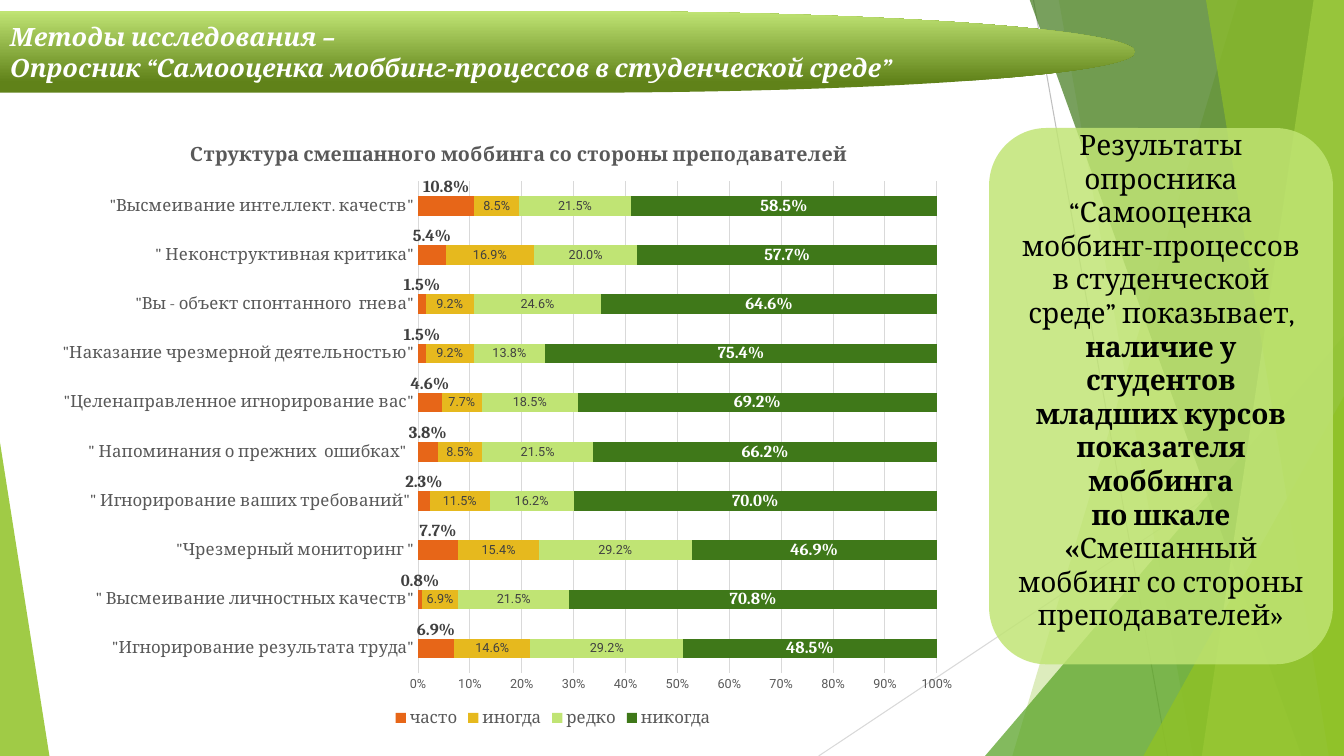
from copy import deepcopy
from dataclasses import dataclass
from typing import Optional

from pptx import Presentation
from pptx.chart.data import CategoryChartData
from pptx.dml.color import RGBColor
from pptx.enum import chart as charts, shapes, text
from pptx.oxml import parse_xml
from pptx.oxml.ns import nsdecls
from pptx.util import Inches, Pt

WIDTH, HEIGHT = 13.33, 7.5


@dataclass(frozen=True)
class Theme:
    serif: str = "Cambria"
    sans: str = "Roboto"
    white: str = "FFFFFF"
    black: str = "000000"
    axis_text: str = "595959"
    label_text: str = "404040"
    grid: str = "D9D9D9"
    line: str = "BFBFBF"
    lime: str = "90C226"
    leaf: str = "54A021"
    forest: str = "3F7819"
    pale: str = "C0E474"
    olive: str = "608219"
    orange: str = "E76618"
    yellow: str = "E6B91E"
    heading: int = 18
    body: int = 20
    title: int = 14
    label: int = 12
    small: int = 9


THEME = Theme()


@dataclass(frozen=True)
class Ray:
    start: tuple[float, float]
    end: tuple[float, float]
    color: str


@dataclass(frozen=True)
class Band:
    top_x: float
    bottom_left: float
    color: str
    opacity: int
    bottom_right: float = WIDTH
    top_right: float = WIDTH


@dataclass(frozen=True)
class Wedge:
    left: float
    top: float
    width: float
    peak: float
    color: str
    opacity: int


@dataclass(frozen=True)
class Answer:
    name: str
    values: tuple[float, ...]
    color: str
    text_color: str = THEME.label_text
    strong: bool = False


RAYS = (Ray((10.25, 0), (11.58, HEIGHT), THEME.line),
        Ray((WIDTH, 4.03), (8.12, HEIGHT), THEME.grid))
BACKDROP = (
    Band(12.28, 10.04, THEME.lime, 30),
    Band(10.5, 11.83, THEME.lime, 20),
    Wedge(9.77, 3.33, 3.56, 1, THEME.leaf, 72),
    Band(10.21, 12.91, THEME.forest, 70),
    Band(13.03, 11.92, THEME.pale, 70),
    Band(11.96, 13.18, THEME.lime, 65),
    Wedge(11.34, 3.93, 1.99, 1, THEME.lime, 80),
    Wedge(0, 4.39, 0.49, 0, THEME.lime, 85),
)
SCALES = (
    ' "Игнорирование результата труда"', '" Высмеивание личностных качеств"',
    ' "Чрезмерный мониторинг "', '" Игнорирование ваших требований" ',
    '" Напоминания о прежних  ошибках"  ', '"Целенаправленное игнорирование вас"',
    '"Наказание чрезмерной деятельностью"', '"Вы - объект спонтанного  гнева"',
    '" Неконструктивная критика"', '"Высмеивание интеллект. качеств"',
)
ANSWERS = (
    Answer("часто", (0.069, 0.008, 0.077, 0.023, 0.038, 0.046, 0.015, 0.015, 0.054, 0.108),
           THEME.orange, strong=True),
    Answer("иногда", (0.146, 0.069, 0.154, 0.115, 0.085, 0.077, 0.092, 0.092, 0.169, 0.085),
           THEME.yellow),
    Answer("редко", (0.292, 0.215, 0.292, 0.162, 0.215, 0.185, 0.138, 0.246, 0.2, 0.215),
           THEME.pale),
    Answer("никогда", (0.485, 0.708, 0.469, 0.7, 0.662, 0.692, 0.754, 0.646, 0.577, 0.585),
           THEME.forest, THEME.white, True),
)
LABEL_RISE = 0.03


def rgb(color: str) -> RGBColor:
    return RGBColor.from_string(color)


def style_font(font, *, size: float, color: str, name: str = THEME.serif,
               bold: bool = False, italic: bool = False) -> None:
    font.size, font.name, font.bold, font.italic = Pt(size), name, bold, italic
    font.color.rgb = rgb(color)


def write(para, words: str, **style) -> None:
    for number, line in enumerate(words.split("\n")):
        if number:
            para.add_line_break()
        span = para.add_run()
        span.text = line
        style_font(span.font, **style)


def paint(shape, color: str, opacity: int) -> None:
    shape.shadow.inherit = False
    shape.line.fill.background()
    shape.fill.solid()
    shape.fill.fore_color.rgb = rgb(color)
    tint = shape.element.xpath("./p:spPr/a:solidFill/a:srgbClr")[0]
    tint.append(parse_xml(f'<a:alpha {nsdecls("a")} val="{opacity * 1000}"/>'))


def add_box(page, kind, left: float, top: float, width: float, height: float):
    return page.shapes.add_shape(kind, *map(Inches, (left, top, width, height)))


def draw_ray(page, ray: Ray) -> None:
    line = page.shapes.add_connector(shapes.MSO_CONNECTOR.STRAIGHT,
                                     *map(Inches, ray.start + ray.end))
    line.line.color.rgb = rgb(ray.color)
    line.line.width = Pt(0.75)
    line.element.spPr.append(parse_xml(f'<a:effectLst {nsdecls("a")}/>'))


def draw_band(page, band: Band) -> None:
    outline = page.shapes.build_freeform(Inches(band.top_x), Inches(-0.01))
    corners = ((band.top_right, -0.01), (band.bottom_right, HEIGHT), (band.bottom_left, HEIGHT))
    outline.add_line_segments([(Inches(x), Inches(y)) for x, y in corners], close=True)
    paint(outline.convert_to_shape(), band.color, band.opacity)


def draw_wedge(page, wedge: Wedge) -> None:
    box = add_box(page, shapes.MSO_SHAPE.ISOSCELES_TRIANGLE, wedge.left, wedge.top,
                  wedge.width, HEIGHT - wedge.top)
    box.adjustments[0] = wedge.peak
    paint(box, wedge.color, wedge.opacity)


def draw_heading(page) -> None:
    box = add_box(page, shapes.MSO_SHAPE.FLOWCHART_DELAY, 0, 0.11, 11.26, 0.81)
    box.shadow.inherit = False
    box.line.fill.background()
    box.fill.gradient()
    box.fill.gradient_angle = 90
    for stop, color, position in zip(box.fill.gradient_stops, (THEME.olive, THEME.pale), (0.13, 1)):
        stop.color.rgb, stop.position = rgb(color), position
    para = box.text_frame.paragraphs[0]
    para.alignment = text.PP_ALIGN.LEFT
    write(para, "Методы исследования – \nОпросник “Самооценка моббинг-процессов в студенческой среде”",
          size=THEME.heading, color=THEME.white, bold=True, italic=True)


def draw_summary(page) -> None:
    box = add_box(page, shapes.MSO_SHAPE.ROUNDED_RECTANGLE, 9.81, 1.27, 3.41, 5.32)
    paint(box, THEME.pale, 84)
    frame = box.text_frame
    frame.word_wrap = True
    frame.margin_bottom = Inches(0.38)
    paragraphs = (
        (("Результаты опросника “Самооценка моббинг-процессов в студенческой среде” показывает, ", False),
         ("наличие у студентов младших курсов показателя моббинга", True)),
        (("по шкале «", True), ("Смешанный моббинг со стороны преподавателей»", False)),
    )
    for para, spans in zip((frame.paragraphs[0], frame.add_paragraph()), paragraphs):
        para.alignment = text.PP_ALIGN.CENTER
        for words, bold in spans:
            write(para, words, size=THEME.body, color=THEME.black, bold=bold)


def layout_xml(x: float, y: float, size: Optional[tuple[float, float]] = None, edge: bool = True):
    modes = '<c:xMode val="edge"/><c:yMode val="edge"/>' if edge else ""
    target = '<c:layoutTarget val="inner"/>' if size else ""
    extent = f'<c:w val="{size[0]}"/><c:h val="{size[1]}"/>' if size else ""
    return parse_xml(f'<c:layout {nsdecls("c")}><c:manualLayout>{target}{modes}'
                     f'<c:x val="{x}"/><c:y val="{y}"/>{extent}</c:manualLayout></c:layout>')


def place(parent, index: int, layout) -> None:
    for old in parent.xpath("./c:layout"):
        parent.remove(old)
    parent.insert(index, layout)


def raise_labels(labels, count: int) -> None:
    root = labels.element if hasattr(labels, "element") else labels
    shared = [part for part in root]
    for index in range(count):
        label = parse_xml(f'<c:dLbl {nsdecls("c")}><c:idx val="{index}"/></c:dLbl>')
        label.append(layout_xml(0, -LABEL_RISE, edge=False))
        label.extend(deepcopy(part) for part in shared if not part.tag.endswith("showLeaderLines"))
        root.insert(index, label)


def draw_chart(page) -> None:
    data = CategoryChartData(number_format="0.0%")
    data.categories = SCALES
    for answer in ANSWERS:
        data.add_series(answer.name, answer.values)
    chart = page.shapes.add_chart(charts.XL_CHART_TYPE.BAR_STACKED_100,
                                  *map(Inches, (0.47, 1.18, 9.19, 6.18)), data).chart
    style_font(chart.font, size=10, color=THEME.black, name=THEME.sans)
    write(chart.chart_title.text_frame.paragraphs[0],
          "Структура смешанного моббинга со стороны преподавателей",
          size=THEME.title, color=THEME.axis_text, bold=True)
    chart.has_legend = True
    chart.legend.position = charts.XL_LEGEND_POSITION.BOTTOM
    chart.legend.include_in_layout = False
    style_font(chart.legend.font, size=THEME.label, color=THEME.axis_text)

    names, scale = chart.category_axis, chart.value_axis
    for axis in (names, scale):
        axis.major_tick_mark = axis.minor_tick_mark = charts.XL_TICK_MARK.NONE
    style_font(names.tick_labels.font, size=THEME.label, color=THEME.axis_text)
    style_font(scale.tick_labels.font, size=THEME.small, color=THEME.axis_text, name=THEME.sans)
    scale.tick_labels.number_format, scale.tick_labels.number_format_is_linked = "0%", False
    scale.maximum_scale, scale.major_unit = 1, 0.1
    scale.format.line.fill.background()
    for line in (names.format.line, scale.major_gridlines.format.line):
        line.color.rgb, line.width = rgb(THEME.grid), Pt(0.75)

    plot = chart.plots[0]
    plot.gap_width, plot.overlap, plot.vary_by_categories = 150, 100, False
    for series, answer in zip(plot.series, ANSWERS):
        series.format.fill.solid()
        series.format.fill.fore_color.rgb = rgb(answer.color)
        labels = series.data_labels
        labels.show_value = True
        labels.number_format, labels.number_format_is_linked = "0.0%", False
        labels.position = charts.XL_LABEL_POSITION.CENTER
        style_font(labels.font, size=THEME.label if answer.strong else THEME.small,
                   color=answer.text_color, bold=answer.strong,
                   name=THEME.serif if answer.strong else THEME.sans)

    root = chart.element
    raise_labels(root.xpath(".//c:ser/c:dLbls")[0], len(SCALES))
    place(root.xpath("./c:chart/c:title")[0], 1, layout_xml(0.15, 0.03))
    place(root.xpath(".//c:plotArea")[0], 0, layout_xml(0.4, 0.1, (0.56, 0.79)))
    place(root.xpath(".//c:legend")[0], 1, layout_xml(0.37, 0.94))
    root.xpath("./c:chart")[0].addnext(parse_xml(
        f'<c:spPr {nsdecls("c", "a")}><a:noFill/><a:ln><a:noFill/></a:ln></c:spPr>'))


def main() -> None:
    deck = Presentation()
    deck.slide_width, deck.slide_height = Inches(WIDTH), Inches(HEIGHT)
    page = deck.slides.add_slide(deck.slide_layouts[6])
    for ray in RAYS:
        draw_ray(page, ray)
    for part in BACKDROP:
        draw_band(page, part) if isinstance(part, Band) else draw_wedge(page, part)
    draw_heading(page)
    draw_summary(page)
    draw_chart(page)
    deck.save("out.pptx")


if __name__ == "__main__":
    main()
